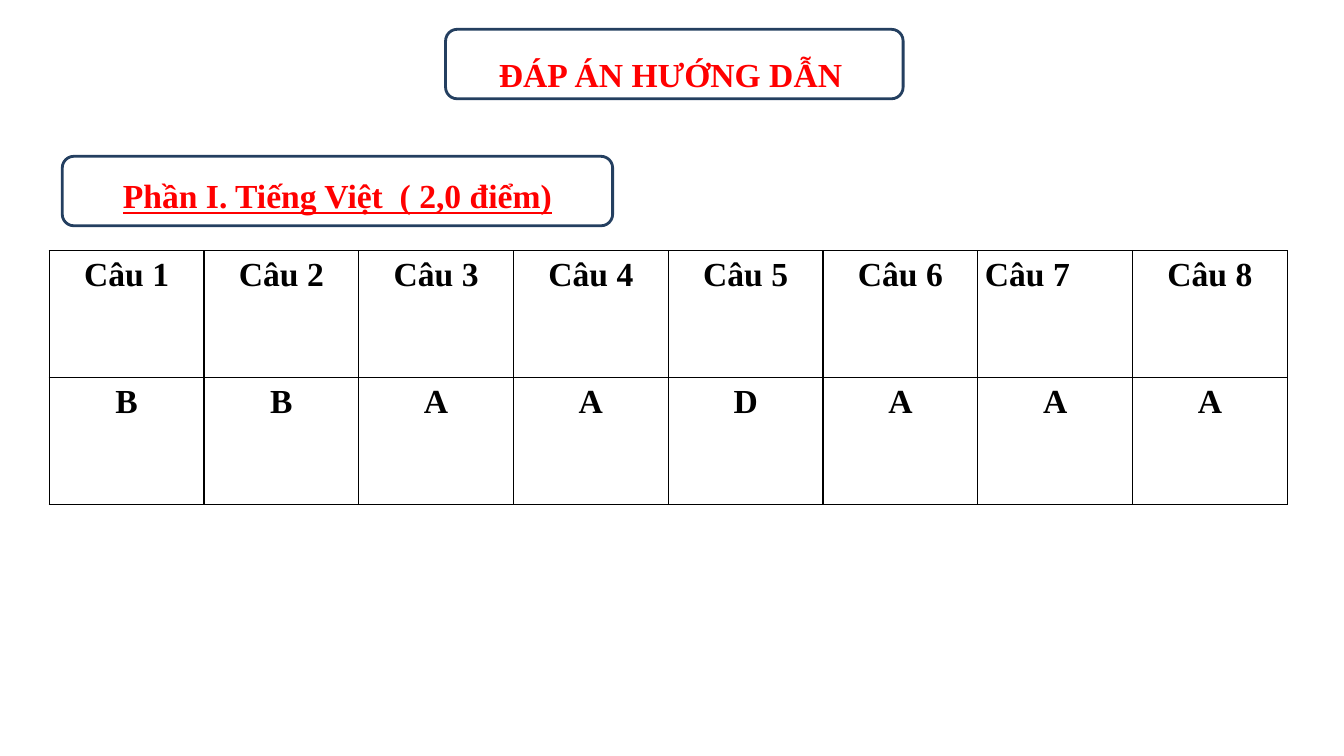
from dataclasses import dataclass

from lxml.etree import SubElement
from pptx import Presentation
from pptx.dml.color import RGBColor as Color
from pptx.enum.shapes import MSO_SHAPE as Shape
from pptx.enum.text import MSO_ANCHOR as Anchor, MSO_AUTO_SIZE as AutoSize, PP_ALIGN as Align
from pptx.oxml.ns import qn
from pptx.util import Cm, Pt


@dataclass(frozen=True)
class Theme:
    font: str = "Times New Roman"
    size: float = 24
    heading: str = "FF0000"
    ink: str = "000000"
    paper: str = "FFFFFF"
    frame: str = "243F60"
    frame_width: float = 2
    border_width: float = 1


class AnswerPage:
    def __init__(self, deck, theme):
        self.theme = theme
        self.page = deck.slides.add_slide(deck.slide_layouts[5])

    def set_text(self, frame, text, color, align=Align.CENTER, underline=None):
        frame.text = text
        para = frame.paragraphs[0]
        para.alignment = align
        para.line_spacing = 1.15
        para.space_before = Pt(0)
        para.space_after = Pt(10)
        font = para.runs[0].font
        font.name = self.theme.font
        font.size = Pt(self.theme.size)
        font.bold = True
        font.underline = underline
        font.color.rgb = Color.from_string(color)

    def frame(self, left, top, width, height):
        box = self.page.shapes.add_shape(
            Shape.ROUNDED_RECTANGLE, Cm(left), Cm(top), Cm(width), Cm(height))
        box.shadow.inherit = False
        box.fill.background()
        box.line.color.rgb = Color.from_string(self.theme.frame)
        box.line.width = Pt(self.theme.frame_width)

    def heading(self, box, text, left, top, width, height, **style):
        box.left, box.top, box.width, box.height = Cm(left), Cm(top), Cm(width), Cm(height)
        frame = box.text_frame
        frame.word_wrap = True
        frame.auto_size = AutoSize.NONE
        frame.vertical_anchor = Anchor.TOP
        self.set_text(frame, text, self.theme.heading, **style)

    def title(self, text, *place):
        self.heading(self.page.shapes.title, text, *place, align=Align.LEFT)

    def section(self, text, *place):
        box = self.page.shapes.add_textbox(0, 0, 0, 0)
        self.heading(box, text, *place, underline=True)

    def cell(self, cell, text, align):
        cell.margin_left = cell.margin_right = Cm(0.18)
        cell.margin_top = cell.margin_bottom = 0
        self.set_text(cell.text_frame, text, self.theme.ink, align)
        properties = cell._tc.get_or_add_tcPr()
        for side in ("a:lnL", "a:lnR", "a:lnT", "a:lnB"):
            line = SubElement(properties, qn(side), w=str(Pt(self.theme.border_width)))
            fill = SubElement(line, qn("a:solidFill"))
            SubElement(fill, qn("a:srgbClr"), val=self.theme.ink)
        cell.fill.solid()
        cell.fill.fore_color.rgb = Color.from_string(self.theme.paper)

    def table(self, rows, left, top, column_width, row_height, left_aligned=()):
        count = len(rows[0])
        table = self.page.shapes.add_table(
            len(rows), count, Cm(left), Cm(top),
            Cm(column_width * count), Cm(row_height * len(rows))).table
        for column in table.columns:
            column.width = Cm(column_width)
        for r, row in enumerate(rows):
            table.rows[r].height = Cm(row_height)
            for c, text in enumerate(row):
                align = Align.LEFT if text in left_aligned else Align.CENTER
                self.cell(table.cell(r, c), text, align)


def main():
    deck = Presentation()
    deck.slide_width, deck.slide_height = Cm(33.87), Cm(19.05)
    page = AnswerPage(deck, Theme())

    # Framed headings
    page.frame(11.23, 0.74, 11.53, 1.75)
    page.title("ĐÁP ÁN HƯỚNG DẪN", 12.32, 1.07, 9.22, 1.35)
    page.frame(1.57, 3.94, 13.87, 1.75)
    page.section("Phần I. Tiếng Việt  ( 2,0 điểm)", 1.24, 4.14, 14.53, 1.37)

    # Answer key
    answers = "BBAADAAA"
    questions = [f"Câu {number}" for number in range(1, len(answers) + 1)]
    page.table([questions, answers], 1.24, 6.32, 3.9, 3.2, left_aligned=("Câu 7",))

    deck.save("out.pptx")


if __name__ == "__main__":
    main()
